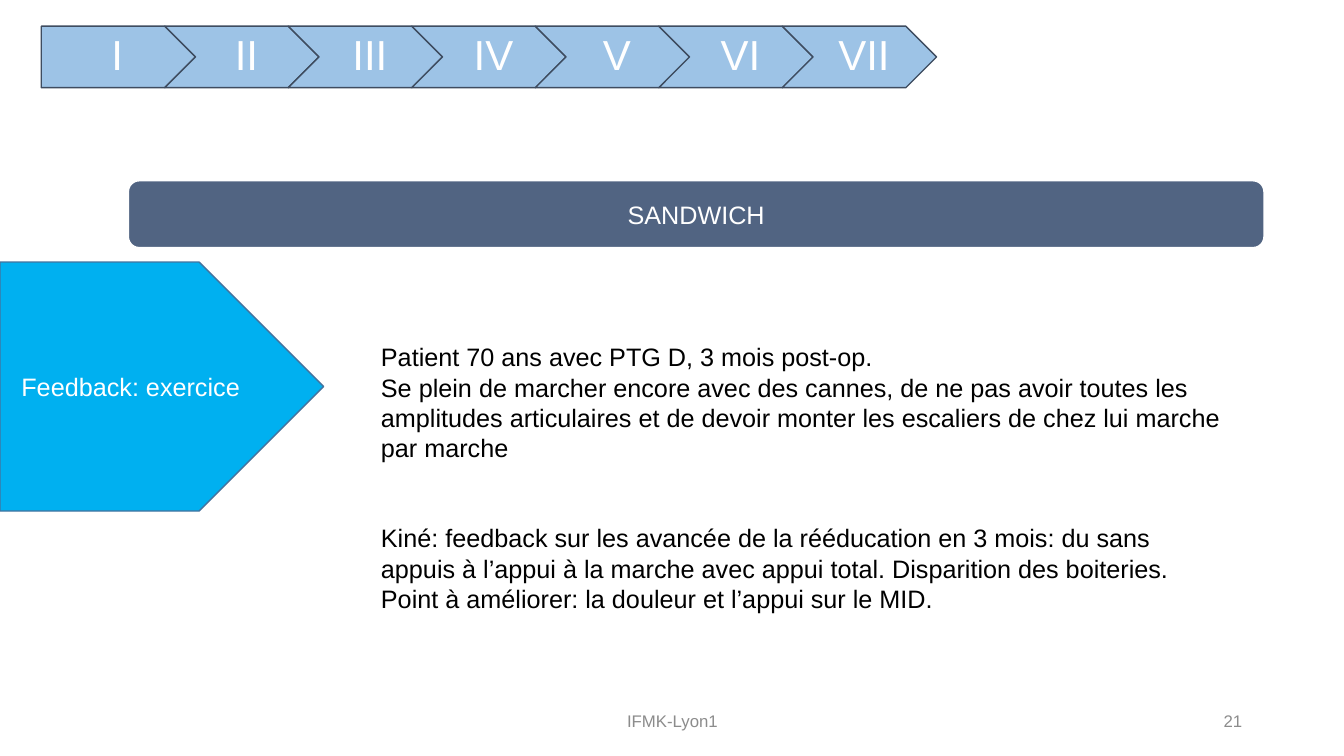
import pptx
import pptx.dml.color
import pptx.enum.shapes
import pptx.enum.text
import pptx.util

Inches = pptx.util.Inches
Pt = pptx.util.Pt
Shape = pptx.enum.shapes.MSO_SHAPE
Align = pptx.enum.text.PP_ALIGN
Anchor = pptx.enum.text.MSO_ANCHOR


def color(value):
    return pptx.dml.color.RGBColor.from_string(value)


class SlideBuilder:
    font = "Arial"
    white = "FFFFFF"
    black = "000000"
    gray = "8C8C8C"

    def __init__(self, page):
        self.page = page

    def fill_text(self, box, texts, size, ink, align, anchor, gaps=None):
        frame = box.text_frame
        frame.word_wrap = True
        frame.vertical_anchor = anchor
        for index, text in enumerate(texts):
            paragraph = frame.paragraphs[0] if index == 0 else frame.add_paragraph()
            paragraph.text = text
            paragraph.alignment = align
            paragraph.font.name = self.font
            paragraph.font.size = Pt(size)
            paragraph.font.color.rgb = color(ink)
            if gaps and gaps[index]:
                paragraph.space_before = Pt(gaps[index])
        return frame

    def shape(self, kind, place, fill, line, width, text, size=18):
        box = self.page.shapes.add_shape(kind, *map(Inches, place))
        box.shadow.inherit = False
        box.fill.solid()
        box.fill.fore_color.rgb = color(fill)
        box.line.color.rgb = color(line)
        box.line.width = Pt(width)
        return self.fill_text(box, [text], size, self.white, Align.CENTER, Anchor.MIDDLE)

    def step(self, kind, left, numeral, inset):
        frame = self.shape(kind, (left, 0.26, 1.53, 0.61), "9DC3E6", "3E4C60", 1, numeral, 30)
        frame.margin_left = Inches(inset)
        frame.margin_right = Inches(0.04)
        frame.margin_top = frame.margin_bottom = Inches(0.09)
        frame.paragraphs[0].line_spacing = 0.9

    def text(self, place, texts, size, ink, align, anchor, gaps=None):
        box = self.page.shapes.add_textbox(*map(Inches, place))
        self.fill_text(box, texts, size, ink, align, anchor, gaps)

    def footer(self, left, width, text, align):
        self.text((left, 6.95, width, 0.4), [text], 12, self.gray, align, Anchor.MIDDLE)


def main():
    deck = pptx.Presentation()
    deck.slide_width = Inches(13.33)
    deck.slide_height = Inches(7.5)
    builder = SlideBuilder(deck.slides.add_slide(deck.slide_layouts[6]))

    builder.footer(4.42, 4.5, "IFMK-Lyon1", Align.CENTER)
    builder.footer(9.42, 3, "21", Align.RIGHT)

    for index, numeral in enumerate(["I", "II", "III", "IV", "V", "VI", "VII"]):
        kind, inset = (Shape.CHEVRON, 0.13) if index else (Shape.PENTAGON, 0.17)
        builder.step(kind, 0.41 + index * 1.225, numeral, inset)

    builder.shape(Shape.PENTAGON, (0, 2.6, 3.21, 2.47), "00B0F0", "43739E", 1, "Feedback: exercice")
    builder.shape(Shape.ROUNDED_RECTANGLE, (1.27, 1.79, 11.27, 0.67), "516482", "FFFFFF", 1.5, "SANDWICH")

    case_texts = [
        "Patient 70 ans avec PTG D, 3 mois post-op.",
        "Se plein de marcher encore avec des cannes, de ne pas avoir toutes les amplitudes "
        "articulaires et de devoir monter les escaliers de chez lui marche par marche",
        "Kiné: feedback sur les avancée de la rééducation en 3 mois: du sans appuis à l’appui "
        "à la marche avec appui total. Disparition des boiteries. Point à améliorer: la douleur "
        "et l’appui sur le MID.",
    ]
    builder.text((3.68, 3.34, 8.61, 2.83), case_texts, 18, builder.black,
                 Align.LEFT, Anchor.TOP, [0, 0, 43])

    deck.save("out.pptx")


if __name__ == "__main__":
    main()
